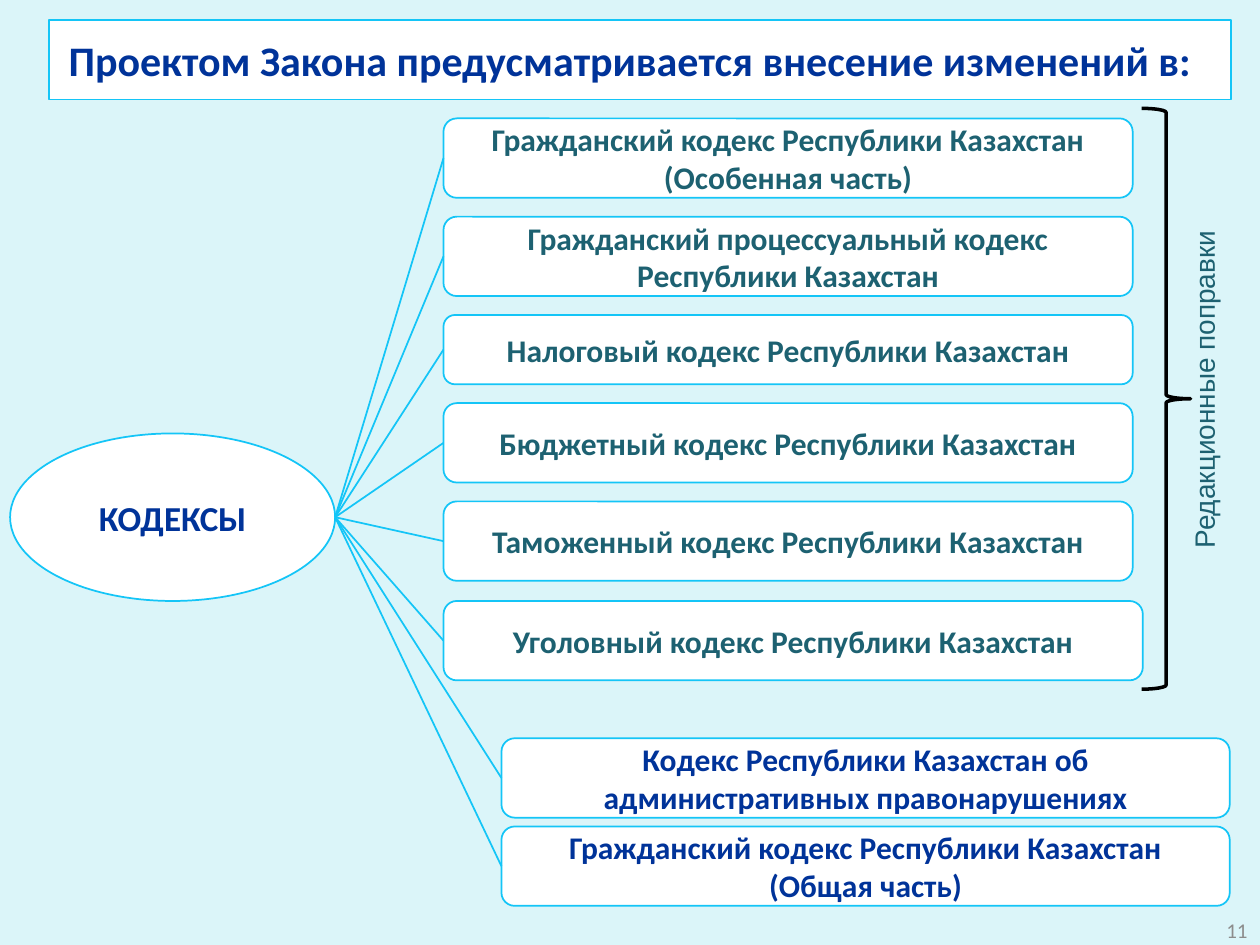
from pptx import Presentation
from pptx.dml.color import RGBColor
from pptx.enum import shapes, text
from pptx.oxml import parse_xml
from pptx.oxml.ns import nsdecls, qn
from pptx.util import Inches, Pt

NAVY, TEAL, SKY, WHITE = "003399", "1D6171", "14C5F7", "FFFFFF"
KIND = shapes.MSO_SHAPE


def color(value):
    return RGBColor.from_string(value)


class SlideBuilder:
    font = "Calibri"

    def __init__(self, deck, background):
        self.page = deck.slides.add_slide(deck.slide_layouts[5])
        self.page.background.fill.solid()
        self.page.background.fill.fore_color.rgb = color(background)

    def outline(self, item, value=SKY, width=1):
        item.line.color.rgb = color(value)
        item.line.width = Pt(width)

    def set_words(self, box, words, size, ink, bold=True, font=None,
                  align=text.PP_ALIGN.CENTER):
        frame = box.text_frame
        frame.text = words
        frame.vertical_anchor = text.MSO_ANCHOR.MIDDLE
        for para in frame.paragraphs:
            para.alignment = align
            for span in para.runs:
                span.font.name = font or self.font
                span.font.size = Pt(size)
                span.font.bold = bold
                span.font.color.rgb = color(ink)

    def title(self, words, left, top, width, height):
        box = self.page.shapes.title
        box.left, box.top = Inches(left), Inches(top)
        box.width, box.height = Inches(width), Inches(height)
        box.element.spPr.append(parse_xml(
            f'<a:prstGeom {nsdecls("a")} prst="round2DiagRect"><a:avLst/></a:prstGeom>'))
        box.fill.solid()
        box.fill.fore_color.rgb = color(WHITE)
        self.outline(box)
        self.set_words(box, words, 24, NAVY)
        frame = box.text_frame
        frame.auto_size = text.MSO_AUTO_SIZE.NONE
        frame.margin_left, frame.margin_right = Inches(0.03), Inches(0.19)

    def shape(self, kind, left, top, width, height, words, size, ink):
        box = self.page.shapes.add_shape(
            kind, Inches(left), Inches(top), Inches(width), Inches(height))
        box.shadow.inherit = False
        box.fill.solid()
        box.fill.fore_color.rgb = color(WHITE)
        self.outline(box)
        self.set_words(box, words, size, ink)
        return box

    def brace(self, left, top, width, height):
        brace = self.page.shapes.add_shape(
            KIND.RIGHT_BRACE, Inches(left), Inches(top), Inches(width), Inches(height))
        brace.shadow.inherit = False
        brace.fill.background()
        self.outline(brace, "000000", 2)

    def link(self, hub, box):
        line = self.page.shapes.add_connector(
            shapes.MSO_CONNECTOR.STRAIGHT, hub.left + hub.width,
            hub.top + hub.height // 2, box.left, box.top + box.height // 2)
        line.end_connect(box, 1)
        self.outline(line)
        line.element.spPr.append(parse_xml(f'<a:effectLst {nsdecls("a")}/>'))

    def label(self, left, top, width, height, words, size, ink, **style):
        box = self.page.shapes.add_textbox(
            Inches(left), Inches(top), Inches(width), Inches(height))
        box.text_frame.word_wrap = True
        self.set_words(box, words, size, ink, bold=False, **style)
        return box


def main():
    deck = Presentation()
    deck.slide_width, deck.slide_height = Inches(10), Inches(7.5)
    slide = SlideBuilder(deck, "DBF5F9")

    slide.title("Проектом Закона предусматривается внесение изменений в:",
                0.39, 0.16, 9.38, 0.63)

    # Hub and the codes linked to it
    hub = slide.shape(KIND.OVAL, 0.08, 3.44, 2.58, 1.33, "КОДЕКСЫ", 20, NAVY)
    editorial = (3.52, TEAL)
    substantial = (3.98, NAVY)
    codes = [
        (editorial, 0.94, 5.47, 0.63,
         "Гражданский кодекс Республики Казахстан (Особенная часть)"),
        (editorial, 1.72, 5.47, 0.63,
         "Гражданский процессуальный кодекс\nРеспублики Казахстан"),
        (editorial, 2.5, 5.47, 0.55, "Налоговый кодекс Республики Казахстан"),
        (editorial, 3.2, 5.47, 0.63, "Бюджетный кодекс Республики Казахстан"),
        (editorial, 3.98, 5.47, 0.63, "Таможенный кодекс Республики Казахстан"),
        (editorial, 4.77, 5.55, 0.63, "Уголовный кодекс Республики Казахстан"),
        (substantial, 5.86, 5.78, 0.63,
         "Кодекс Республики Казахстан об административных правонарушениях"),
        (substantial, 6.56, 5.78, 0.63,
         "Гражданский кодекс Республики Казахстан (Общая часть)"),
    ]
    for (left, ink), top, width, height, words in codes:
        box = slide.shape(KIND.ROUNDED_RECTANGLE, left, top, width, height,
                          words, 18, ink)
        slide.link(hub, box)

    # Brace with its vertical label
    slide.brace(9.06, 0.86, 0.39, 4.61)
    note = slide.label(9.37, 1.8, 0.47, 2.65, "Редакционные поправки", 16, TEAL,
                       font="Arial", align=text.PP_ALIGN.LEFT)
    note.text_frame.word_wrap = False
    note.text_frame.vertical_anchor = text.MSO_ANCHOR.TOP
    note.element.txBody.find(qn("a:bodyPr")).set("vert", "vert270")

    # Page number
    slide.label(7.67, 7.18, 2.33, 0.4, "11", 12, "8C8C8C",
                align=text.PP_ALIGN.RIGHT)

    deck.save("out.pptx")


if __name__ == "__main__":
    main()
